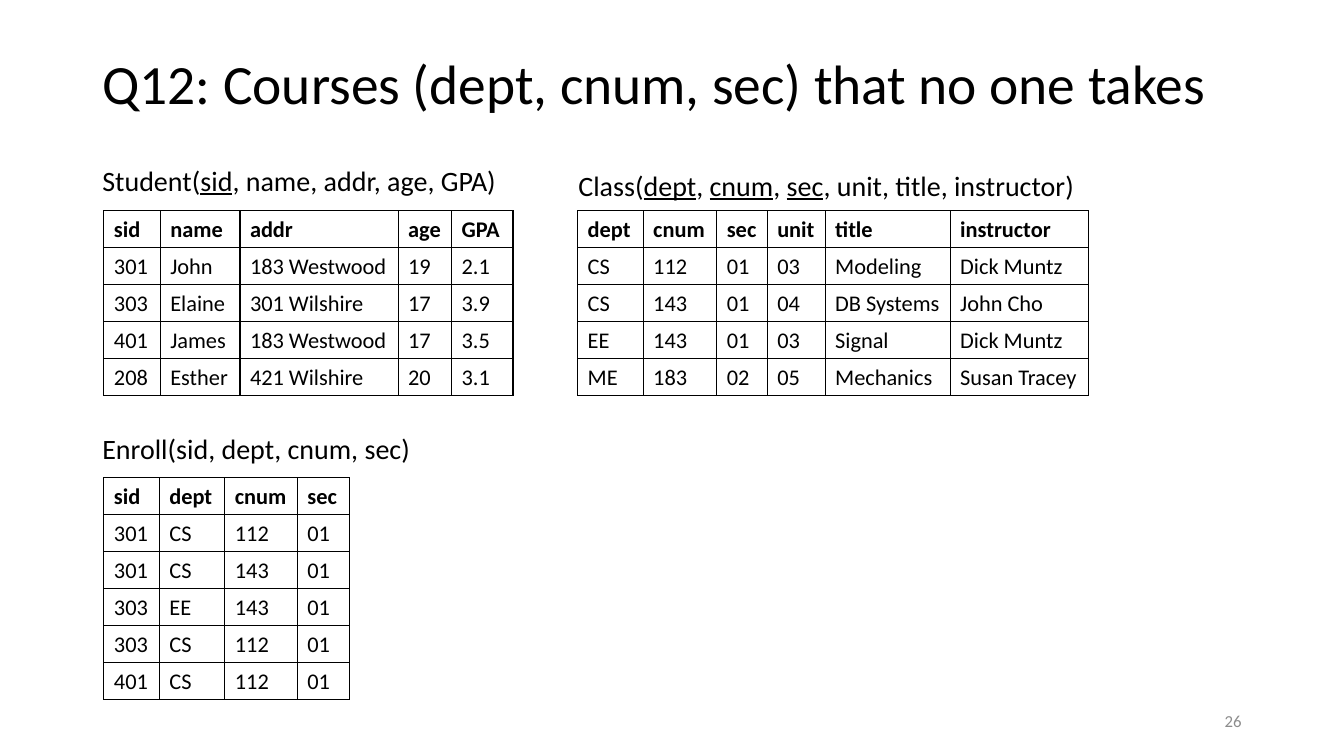
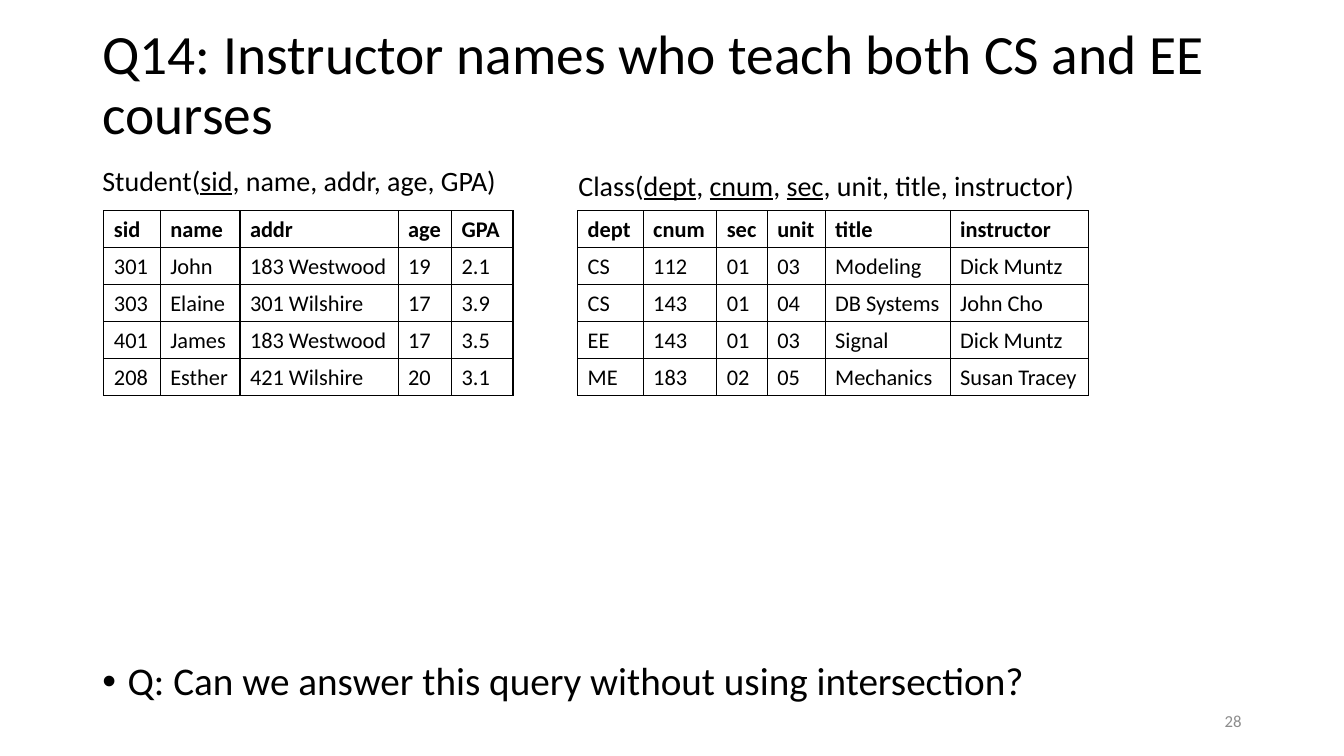
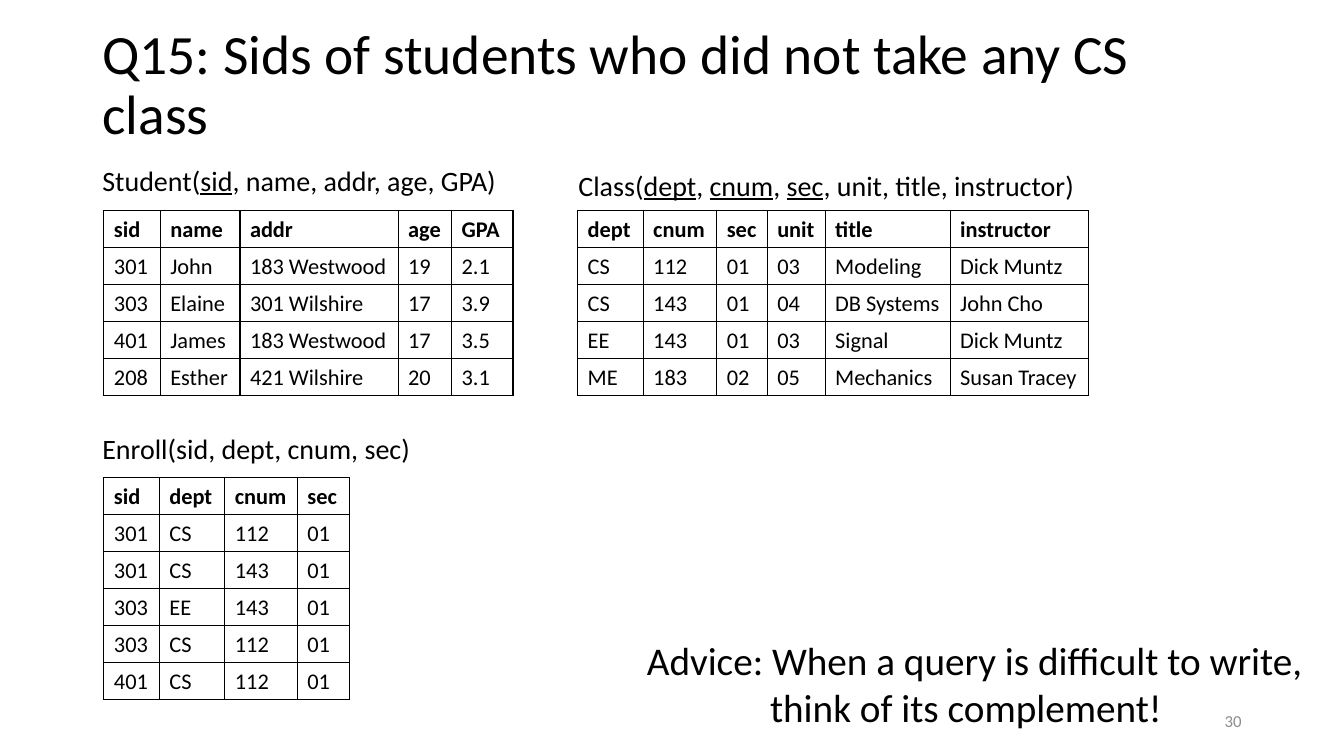
from dataclasses import dataclass

from lxml.etree import SubElement
from pptx import Presentation
from pptx.dml.color import RGBColor
from pptx.enum.text import MSO_ANCHOR, MSO_AUTO_SIZE, PP_ALIGN
from pptx.oxml.ns import qn
from pptx.util import Pt


@dataclass(frozen=True)
class Theme:
    font: str = "Calibri"
    ink: str = "000000"
    gray: str = "8C8C8C"
    title: float = 39.6
    body: float = 28
    label: float = 20
    cell: float = 16
    foot: float = 12
    rule: float = 1
    row: float = 26.4


theme = Theme()


def write(para, text, size, color=theme.ink, bold=False):
    for i, part in enumerate(text.split("_")):
        if part:
            run = para.add_run()
            run.text = part
            font = run.font
            font.name = theme.font
            font.size = Pt(size)
            font.bold = bold
            font.underline = i % 2 == 1
            font.color.rgb = RGBColor.from_string(color)


def grid(slide, left, top, widths, rows):
    frame = slide.shapes.add_table(
        len(rows), len(widths), Pt(left), Pt(top),
        Pt(sum(widths)), Pt(theme.row * len(rows)))
    table = frame.table
    table.horz_banding = False
    for col, width in zip(table.columns, widths):
        col.width = Pt(width)
    for r, row in enumerate(rows):
        table.rows[r].height = Pt(theme.row)
        for c, text in enumerate(row):
            cell = table.cell(r, c)
            write(cell.text_frame.paragraphs[0], text, theme.cell, bold=r == 0)
            props = cell._tc.get_or_add_tcPr()
            for side in ("a:lnL", "a:lnR", "a:lnT", "a:lnB"):
                line = SubElement(props, qn(side), w=str(Pt(theme.rule)))
                fill = SubElement(line, qn("a:solidFill"))
                SubElement(fill, qn("a:srgbClr"), val=theme.ink)
            cell.fill.background()


student = (74.2, 150.5, [40.3, 56.9, 113, 38.2, 43.9], [
    ["sid", "name", "addr", "age", "GPA"],
    ["301", "John", "183 Westwood", "19", "2.1"],
    ["303", "Elaine", "301 Wilshire", "17", "3.9"],
    ["401", "James", "183 Westwood", "17", "3.5"],
    ["208", "Esther", "421 Wilshire", "20", "3.1"],
])
course = (412.6, 150.5, [46.8, 52.6, 36, 41.4, 89.3, 98.6], [
    ["dept", "cnum", "sec", "unit", "title", "instructor"],
    ["CS", "112", "01", "03", "Modeling", "Dick Muntz"],
    ["CS", "143", "01", "04", "DB Systems", "John Cho"],
    ["EE", "143", "01", "03", "Signal", "Dick Muntz"],
    ["ME", "183", "02", "05", "Mechanics", "Susan Tracey"],
])
enroll = (74.2, 341.2, [39.6, 46.8, 51.8, 37.4], [
    ["sid", "dept", "cnum", "sec"],
    ["301", "CS", "112", "01"],
    ["301", "CS", "143", "01"],
    ["303", "EE", "143", "01"],
    ["303", "CS", "112", "01"],
    ["401", "CS", "112", "01"],
])
heads = [
    (66, 113, 300, "Student(_sid_, name, addr, age, GPA)"),
    (406, 116.5, 433, "Class(_dept_, _cnum_, _sec_, unit, title, instructor)"),
]
last = (66, 304.5, 290, "Enroll(sid, dept, cnum, sec)")
pages = [
    ("Q12: Courses (dept, cnum, sec) that no one takes", "26", True, "", []),
    ("Q14: Instructor names who teach both CS and EE courses", "28", False,
     "Q: Can we answer this query without using intersection?", []),
    ("Q15: Sids of students who did not take any CS class", "30", True, "",
     [("Advice: When a query is difficult to write,", 0),
      ("think of its complement!", 88)]),
]

deck = Presentation()
deck.slide_width, deck.slide_height = Pt(960), Pt(540)

for name, number, full, ask, advice in pages:
    slide = deck.slides.add_slide(deck.slide_layouts[1 if ask else 5])
    shapes = slide.shapes
    slots = [(shapes.title, name, 28.8, 65.5, theme.title)]
    if ask:
        slots.append((slide.placeholders[1], ask, 466, 44, theme.body))
    for shape, text, top, height, size in slots:
        shape.left, shape.top = Pt(66), Pt(top)
        shape.width, shape.height = Pt(828), Pt(height)
        frame = shape.text_frame
        frame.auto_size = MSO_AUTO_SIZE.NONE
        frame.vertical_anchor = MSO_ANCHOR.MIDDLE
        para = frame.paragraphs[0]
        para.alignment = PP_ALIGN.LEFT
        para.line_spacing = 0.9
        para.space_before = Pt(0)
        write(para, text, size)
    if ask:
        props = para._p.get_or_add_pPr()
        props.set("marL", str(Pt(18)))
        props.set("indent", str(Pt(-18)))
        SubElement(props, qn("a:buChar"), char="•")

    notes = [(left, top, width, 31, [(text, 0)], theme.label, theme.ink)
             for left, top, width, text in heads + [last] * full]
    if advice:
        notes.append((455, 450.7, 495, 75, advice, theme.body, theme.ink))
    notes.append((678, 500.5, 216, 28.8, [(number, 0)], theme.foot, theme.gray))
    for left, top, width, height, lines, size, color in notes:
        box = shapes.add_textbox(Pt(left), Pt(top), Pt(width), Pt(height))
        frame = box.text_frame
        frame.word_wrap = True
        for i, (text, inset) in enumerate(lines):
            para = frame.add_paragraph() if i else frame.paragraphs[0]
            if inset:
                para._p.get_or_add_pPr().set("marL", str(Pt(inset)))
            write(para, text, size, color)
    frame.vertical_anchor = MSO_ANCHOR.MIDDLE
    para.alignment = PP_ALIGN.RIGHT

    for table in [student, course] + [enroll] * full:
        grid(slide, *table)

deck.save("out.pptx")
